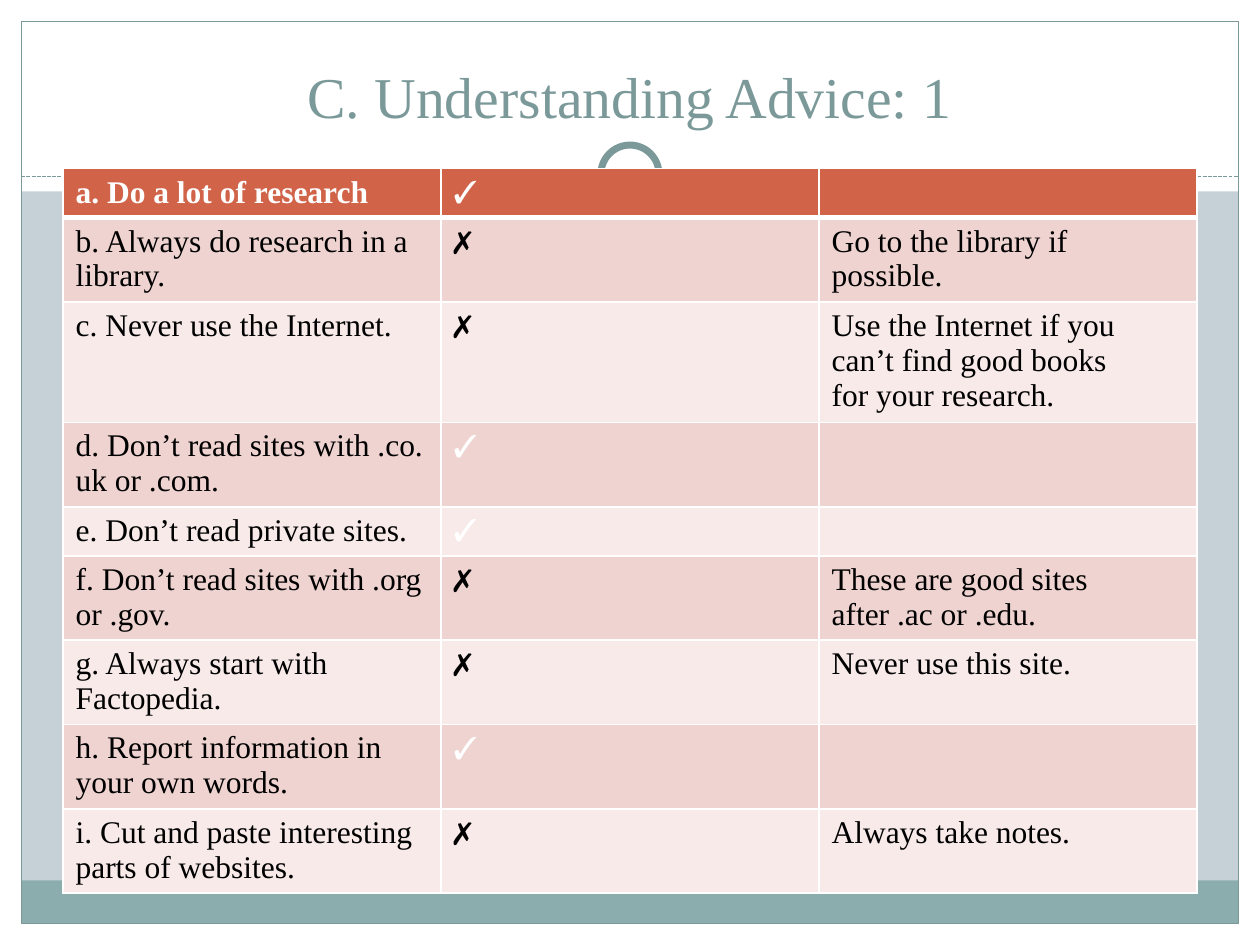
from lxml import etree
from pptx import Presentation
from pptx.dml.color import RGBColor
from pptx.enum import dml, shapes, text
from pptx.oxml.ns import qn
from pptx.util import Cm, Pt

TITLE = "C. Understanding Advice: 1"
YES, NO = "✓", "✗"

# advice, verdict, correction lines, lines of text the row holds
ADVICE = [
    ("a. Do a lot of research", YES, [], 1),
    ("b. Always do research in a library.", NO,
     ["Go to the library if", "possible."], 2),
    ("c. Never use the Internet.", NO,
     ["Use the Internet if you", "can’t find good books", "for your research."], 3),
    ("d. Don’t read sites with .co. uk or .com.", YES, [], 2),
    ("e. Don’t read private sites.", YES, [], 1),
    ("f. Don’t read sites with .org or .gov.", NO,
     ["These are good sites", "after .ac or .edu."], 2),
    ("g. Always start with Factopedia.", NO, ["Never use this site."], 2),
    ("h. Report information in your own words.", YES, [], 2),
    ("i. Cut and paste interesting parts of websites.", NO,
     ["Always take notes."], 2),
]

THEME = {
    "background": "C5D1D7", "paper": "FFFFFF", "accent": "7C999A", "footer": "8CADAE",
    "header": "D16349", "bands": ("F7EAE9", "EED3D0"), "ink": "000000",
    "font": "Times New Roman", "tick_font": "Cambria",
    "title_size": 33, "table_size": 18,
}

WIDTH, HEIGHT, MARGIN = 25.4, 19.05, 0.43
DIVIDER_Y = 3.56
RING_CENTRE_Y = 3.51
COLUMN_WIDTH = 7.62
CELL_PADDING, LINE_HEIGHT = 0.24, 0.73


def rgb(name):
    return RGBColor.from_string(THEME.get(name, name))


def add_plain(slide, kind, box, fill=None, line=None, weight=0.75):
    shape = slide.shapes.add_shape(kind, *map(Cm, box))
    shape.shadow.inherit = False
    if fill:
        shape.fill.solid()
        shape.fill.fore_color.rgb = rgb(fill)
    else:
        shape.fill.background()
    if line:
        shape.line.color.rgb = rgb(line)
        shape.line.width = Pt(weight)
    else:
        shape.line.fill.background()


def draw_frame(slide):
    slide.background.fill.solid()
    slide.background.fill.fore_color.rgb = rgb("background")
    rect, oval = shapes.MSO_SHAPE.RECTANGLE, shapes.MSO_SHAPE.OVAL
    inner_width, inner_height = WIDTH - 2 * MARGIN, HEIGHT - 2 * MARGIN

    for box in [
        (0, HEIGHT - MARGIN, WIDTH, MARGIN),
        (0, 0, WIDTH, 3.86),
        (0, 0, MARGIN, HEIGHT),
        (WIDTH - MARGIN, 0, MARGIN, HEIGHT),
    ]:
        add_plain(slide, rect, box, "paper")
    add_plain(slide, rect, (MARGIN, 17.75, inner_width, 0.87), "footer")
    add_plain(slide, rect, (MARGIN, MARGIN, inner_width, inner_height), line="accent")

    divider = slide.shapes.add_connector(
        shapes.MSO_CONNECTOR.STRAIGHT,
        Cm(MARGIN), Cm(DIVIDER_Y), Cm(WIDTH - MARGIN), Cm(DIVIDER_Y))
    divider.line.color.rgb = rgb("accent")
    divider.line.width = Pt(0.75)
    divider.line.dash_style = dml.MSO_LINE.SQUARE_DOT
    etree.SubElement(divider.element.spPr, qn("a:effectLst"))

    for size, line in [(1.7, None), (1.17, "accent")]:
        box = ((WIDTH - size) / 2, RING_CENTRE_Y - size / 2, size, size)
        add_plain(slide, oval, box, "paper", line, 4)


def style_font(font, name, size, color, bold=False):
    font.name, font.size, font.bold = name, Pt(size), bold
    font.color.rgb = rgb(color)


def place_title(slide):
    title = slide.shapes.title
    title.left, title.top, title.width, title.height = map(Cm, (0.84, 0.64, 23.7, 2.11))
    title.text_frame.text = TITLE
    title.text_frame.vertical_anchor = text.MSO_ANCHOR.BOTTOM
    heading = title.text_frame.paragraphs[0]
    heading.alignment = text.PP_ALIGN.CENTER
    style_font(heading.font, THEME["font"], THEME["title_size"], "accent")
    # Bring the title in front of the white band
    title.element.getparent().append(title.element)


def set_borders(cell, top, bottom):
    properties = cell._tc.get_or_add_tcPr()
    for index, (side, weight) in enumerate(
            [("L", 1), ("R", 1), ("T", top), ("B", bottom)]):
        border = etree.Element(qn(f"a:ln{side}"), w=str(Pt(weight)))
        fill = etree.SubElement(border, qn("a:solidFill"))
        etree.SubElement(fill, qn("a:srgbClr"), val=THEME["paper"])
        properties.insert(index, border)


def fill_cell(cell, lines, row):
    is_tick = lines == [YES]
    is_header = row == 0
    cell.text = "\n".join(lines)
    for paragraph in cell.text_frame.paragraphs:
        style_font(paragraph.font,
                   THEME["tick_font" if is_tick else "font"], THEME["table_size"],
                   "paper" if is_tick or is_header else "ink",
                   is_tick or is_header)
    cell.fill.solid()
    cell.fill.fore_color.rgb = rgb("header" if is_header else THEME["bands"][row % 2])
    set_borders(cell, top=3 if row == 1 else 1, bottom=3 if is_header else 1)


def add_advice_table(slide):
    heights = [CELL_PADDING + LINE_HEIGHT * lines for *_, lines in ADVICE]
    table = slide.shapes.add_table(
        len(ADVICE), 3, Cm(1.27), Cm(3.4),
        Cm(3 * COLUMN_WIDTH), Cm(sum(heights))).table
    for column in table.columns:
        column.width = Cm(COLUMN_WIDTH)
    for row, (advice, verdict, correction, _) in enumerate(ADVICE):
        table.rows[row].height = Cm(heights[row])
        for column, lines in enumerate([[advice], [verdict], correction]):
            fill_cell(table.cell(row, column), lines, row)


def main():
    deck = Presentation()
    deck.slide_width, deck.slide_height = Cm(WIDTH), Cm(HEIGHT)
    slide = deck.slides.add_slide(deck.slide_layouts[5])
    draw_frame(slide)
    place_title(slide)
    add_advice_table(slide)
    deck.save("out.pptx")


if __name__ == "__main__":
    main()
